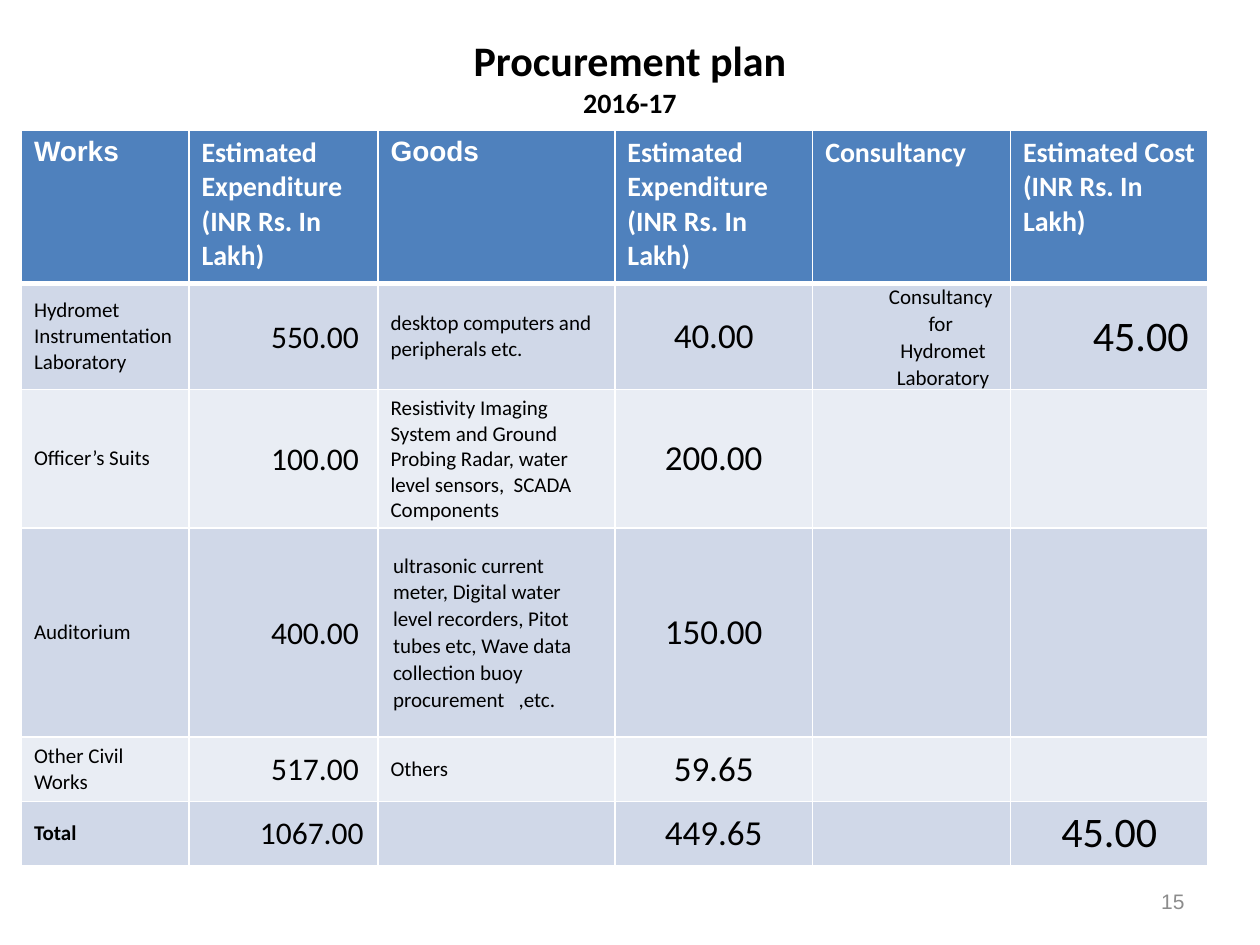
from lxml import etree
from pptx import Presentation
from pptx.dml import color
from pptx.enum import text as t
from pptx.oxml import ns
from pptx.util import Cm, Pt

INCH = 2.54
HUES = {"head": "4F81BD", "odd": "D0D8E8", "even": "E9EDF4",
        "white": "FFFFFF", "black": "000000", "gray": "8C8C8C"}
ALIGN = {"l": t.PP_ALIGN.LEFT, "c": t.PP_ALIGN.CENTER, "r": t.PP_ALIGN.RIGHT}
COLS = [1.33, 1.5, 1.88, 1.57, 1.57, 1.57]
ROWS = [1.22, 0.82, 1.09, 1.66, 0.51, 0.51]
HEADS = ["Works", "Estimated Expenditure (INR Rs. In Lakh)", "Goods",
         "Estimated  Expenditure (INR Rs. In Lakh)", "Consultancy",
         "Estimated Cost (INR Rs. In Lakh)"]
BODY = [
    ["Hydromet Instrumentation Laboratory", "550.00",
     "desktop computers and peripherals etc.", "40.00",
     "Consultancy  for  Hydromet Laboratory", "45.00"],
    ["Officer’s Suits", "100.00",
     "Resistivity Imaging System and Ground Probing Radar, "
     "water level sensors,  SCADA Components", "200.00", "", ""],
    ["Auditorium", "400.00",
     "ultrasonic current meter, Digital water level recorders, Pitot tubes etc, "
     "Wave data collection buoy procurement   ,etc.", "150.00", "", ""],
    ["Other Civil Works", "517.00", "Others", "59.65", "", ""],
    ["Total", "1067.00", "", "449.65", "", "45.00"],
]
SIZES = [12, 18, 12, 20, 12, 24]


def inch(n):
    return Cm(n * INCH)


def write(para, words, size=12, font="Calibri", hue="black", bold=False,
          align="l", indent=0, lead=None):
    para.alignment = ALIGN[align]
    if lead:
        para.line_spacing = lead
    if indent:
        para._p.get_or_add_pPr().set("marL", str(inch(indent)))
    run = para.add_run()
    run.text = words
    run.font.size = Pt(size)
    run.font.name = font
    run.font.bold = bold
    run.font.color.rgb = color.RGBColor.from_string(HUES[hue])


def add_text(slide, box):
    frame = slide.shapes.add_textbox(*map(inch, box)).text_frame
    frame.word_wrap = True
    frame.vertical_anchor = t.MSO_ANCHOR.MIDDLE
    return frame.paragraphs[0]


def add_title(slide, box):
    para = add_text(slide, box)
    write(para, "Procurement plan", size=24, bold=True, align="c")
    para.add_line_break()
    write(para, "2016-17", size=16, bold=True, align="c")


def add_number(slide, box):
    write(add_text(slide, box), "15", font="Arial", hue="gray", align="r")


def paint(cell, hue, edges):
    props = cell._tc.get_or_add_tcPr()
    for side, width in edges.items():
        line = etree.SubElement(props, ns.qn("a:ln" + side), w=str(Pt(width)))
        fill = etree.SubElement(line, ns.qn("a:solidFill"))
        etree.SubElement(fill, ns.qn("a:srgbClr"), val=HUES["white"])
    cell.fill.solid()
    cell.fill.fore_color.rgb = color.RGBColor.from_string(HUES[hue])


def pad(cell, side):
    cell.margin_left = cell.margin_right = inch(side)
    cell.margin_top = cell.margin_bottom = 0


def fill_head(cell, words):
    paint(cell, "head", {"L": 1, "R": 1, "T": 1, "B": 3})
    font = "Arial" if words in ("Works", "Goods") else "Calibri"
    write(cell.text_frame.paragraphs[0], words, size=16, font=font,
          hue="white", bold=True)


def fill_body(cell, words, row, col):
    paint(cell, "odd" if row % 2 else "even",
          {"L": 1, "R": 1, "T": 3 if row == 1 else 1, "B": 1})
    cell.vertical_anchor = t.MSO_ANCHOR.MIDDLE
    if not words:
        return
    last = row == len(BODY)
    look = {"size": SIZES[col], "bold": words == "Total",
            "align": "l" if col in (0, 2) else "c"}
    if col in (1, 4, 5) and not last:
        pad(cell, 0.07)
        look.update(indent=0.5, lead=1.05)
    elif col == 1:
        look["indent"] = 0.45
    elif col == 2 and row == 3:
        pad(cell, 0.12)
        look["lead"] = 1.05
    write(cell.text_frame.paragraphs[0], words, **look)


def add_plan(slide, left, top):
    box = map(inch, (left, top, sum(COLS), sum(ROWS)))
    table = slide.shapes.add_table(len(ROWS), len(COLS), *box).table
    for col, wide in zip(table.columns, COLS):
        col.width = inch(wide)
    for row, high in zip(table.rows, ROWS):
        row.height = inch(high)
    for col, words in enumerate(HEADS):
        fill_head(table.cell(0, col), words)
    for row, line in enumerate(BODY, 1):
        for col, words in enumerate(line):
            fill_body(table.cell(row, col), words, row, col)


def main():
    deck = Presentation()
    deck.slide_width, deck.slide_height = inch(10), inch(7.5)
    slide = deck.slides.add_slide(deck.slide_layouts[6])
    add_title(slide, (0.5, 0.3, 9, 0.62))
    add_number(slide, (7.17, 6.95, 2.33, 0.4))
    add_plan(slide, 0.17, 1.03)
    deck.save("out.pptx")


if __name__ == "__main__":
    main()
